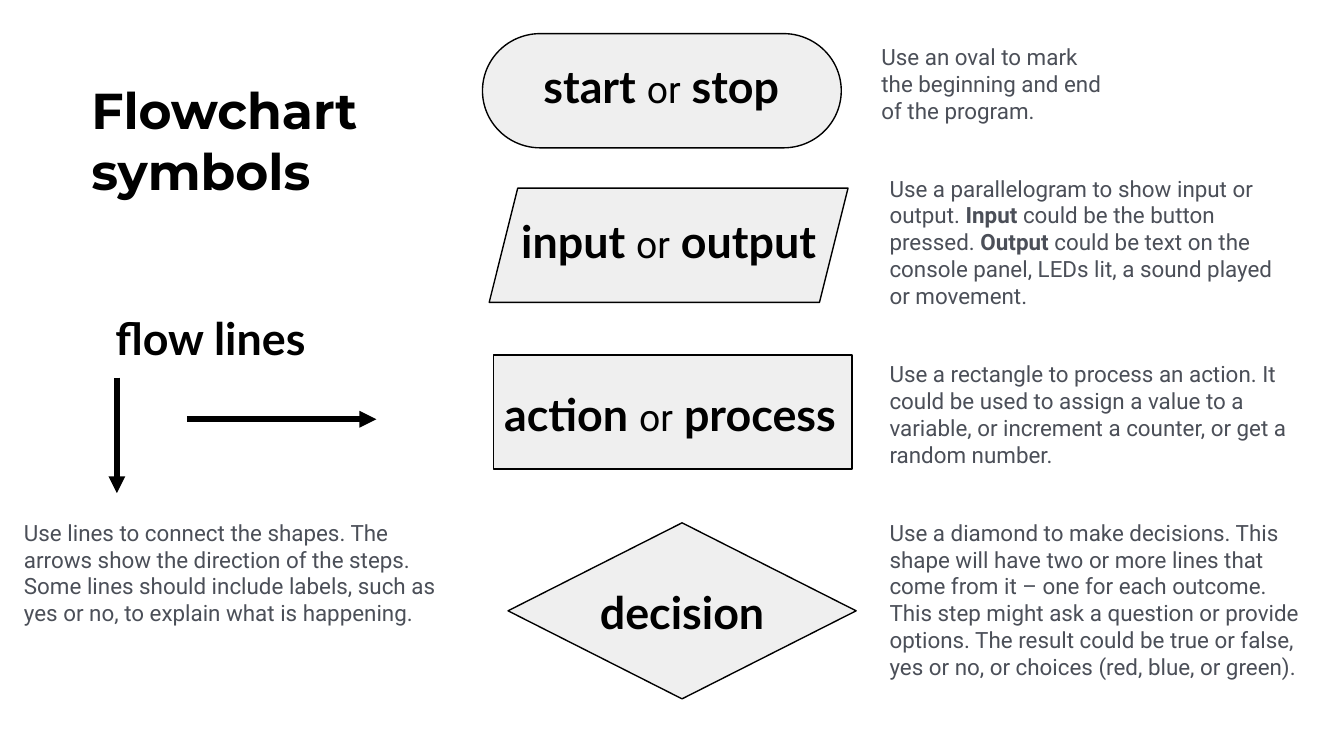
from dataclasses import dataclass

from pptx import Presentation
from pptx.dml.color import RGBColor
from pptx.enum import shapes, text
from pptx.oxml import parse_xml
from pptx.oxml.ns import nsdecls, qn
from pptx.util import Inches, Pt

SLIDE_W = 10
SLIDE_H = SLIDE_W * 9 / 16
BLACK, GREY, PALE = "000000", "4B4F58", "EFEFEF"
LABEL_H = 0.58
Shape = shapes.MSO_SHAPE
Box = tuple[float, float, float, float]


@dataclass
class Symbol:
    """A flowchart symbol; ** in the label and note switches bold on and off."""
    kind: Shape
    box: Box
    label: str
    label_box: Box
    note: str
    note_box: Box


SYMBOLS = [
    Symbol(Shape.FLOWCHART_TERMINATOR, (3.59, 0.25, 2.67, 0.85),
           "**start **or** stop**", (3.78, 0.34, 2.28, LABEL_H),
           "Use an oval to mark the beginning and end of the program.",
           (6.46, 0.22, 1.89, 0.85)),
    Symbol(Shape.PARALLELOGRAM, (3.64, 1.4, 2.67, 0.85),
           "**input **or** output**", (3.74, 1.49, 2.47, LABEL_H),
           "Use a parallelogram to show input or output. **Input** could be the "
           "button pressed. **Output** could be text on the console panel, "
           "LEDs lit, a sound played or movement.",
           (6.52, 1.2, 3.15, 1.21)),
    Symbol(Shape.FLOWCHART_PROCESS, (3.67, 2.64, 2.67, 0.85),
           "**action **or** process**", (3.65, 2.78, 2.67, LABEL_H),
           "Use a rectangle to process an action. It could be used to assign a "
           "value to a variable, or increment a counter, or get a random number.",
           (6.52, 2.58, 3.28, 1.01)),
    Symbol(Shape.FLOWCHART_DECISION, (3.78, 3.89, 2.59, 1.31),
           "**decision**", (3.78, 4.25, 2.59, LABEL_H),
           "Use a diamond to make decisions. This shape will have two or more "
           "lines that come from it – one for each outcome. This step might ask "
           "a question or provide options. The result could be true or false, "
           "yes or no, or choices (red, blue, or green).",
           (6.52, 3.76, 3.28, 1.41)),
]
ARROWS = [(1.39, 3.12, 2.8, 3.12), (0.87, 2.81, 0.87, 3.67)]


def rgb(value: str) -> RGBColor:
    return RGBColor.from_string(value)


def style(font, name: str, size: float, color: str, bold: bool) -> None:
    font.name, font.size, font.bold = name, Pt(size), bold
    font.color.rgb = rgb(color)


def set_frame(tf) -> None:
    """Wrap the text from the top, with equal insets."""
    tf.word_wrap = True
    tf.auto_size = text.MSO_AUTO_SIZE.NONE
    tf.vertical_anchor = text.MSO_ANCHOR.TOP
    tf.margin_left = tf.margin_right = Inches(0.1)
    tf.margin_top = tf.margin_bottom = Inches(0.1)


def add_text(s, box: Box, marked: str, is_label: bool) -> None:
    tf = s.shapes.add_textbox(*map(Inches, box)).text_frame
    set_frame(tf)
    p = tf.paragraphs[0]
    p.alignment = text.PP_ALIGN.CENTER if is_label else text.PP_ALIGN.LEFT
    for i, part in enumerate(marked.split("**")):
        if not part:
            continue
        bold = i % 2 == 1
        r = p.add_run()
        r.text = part
        if is_label:
            style(r.font, "Lato" if bold else "Roboto", 24 if bold else 20, BLACK, bold)
        else:
            style(r.font, "Roboto", 12, GREY, bold)


def add_symbol(s, symbol: Symbol) -> None:
    sp = s.shapes.add_shape(symbol.kind, *map(Inches, symbol.box))
    sp.shadow.inherit = False
    sp.fill.solid()
    sp.fill.fore_color.rgb = rgb(PALE)
    sp.line.color.rgb = rgb(BLACK)
    sp.line.width = Pt(0.75)
    add_text(s, symbol.label_box, symbol.label, is_label=True)
    add_text(s, symbol.note_box, symbol.note, is_label=False)


def add_arrow(s, ends: Box) -> None:
    line = s.shapes.add_connector(shapes.MSO_CONNECTOR.STRAIGHT, *map(Inches, ends))
    line.line.color.rgb = rgb(BLACK)
    line.line.width = Pt(3)
    sp_pr = line._element.spPr
    sp_pr.find(qn("a:ln")).append(
        parse_xml(f'<a:tailEnd {nsdecls("a")} type="triangle"/>'))
    sp_pr.append(parse_xml(f'<a:effectLst {nsdecls("a")}/>'))


def add_title(s, box: Box, title: str) -> None:
    sp = s.shapes.title
    sp.left, sp.top, sp.width, sp.height = map(Inches, box)
    tf = sp.text_frame
    tf.text = title
    set_frame(tf)
    p = tf.paragraphs[0]
    p.alignment = text.PP_ALIGN.LEFT
    style(p.runs[0].font, "Montserrat", 27, BLACK, True)


def main() -> None:
    prs = Presentation()
    prs.slide_width, prs.slide_height = Inches(SLIDE_W), Inches(SLIDE_H)
    s = prs.slides.add_slide(prs.slide_layouts[5])
    add_title(s, (0.58, 0.49, 2.28, 1.08), "Flowchart symbols")
    for symbol in SYMBOLS:
        add_symbol(s, symbol)
    add_text(s, (0.27, 2.21, 2.59, LABEL_H), "**flow lines**", is_label=True)
    add_text(s, (0.08, 3.76, 3.28, 1.01),
             "Use lines to connect the shapes. The arrows show the direction of "
             "the steps. Some lines should include labels, such as yes or no, "
             "to explain what is happening.", is_label=False)
    for ends in ARROWS:
        add_arrow(s, ends)
    prs.save("out.pptx")


if __name__ == "__main__":
    main()
